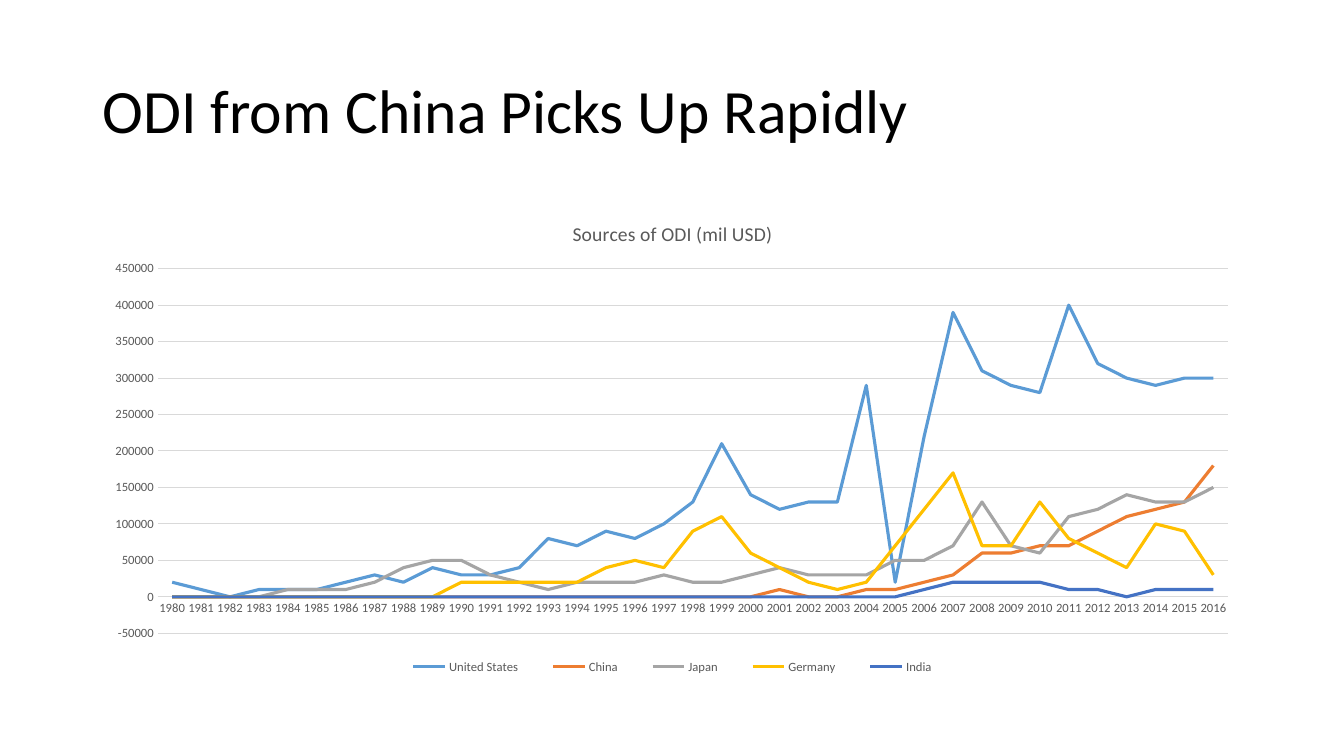
from lxml import etree
from pptx import Presentation
from pptx import util as u
from pptx.chart.data import CategoryChartData
from pptx.dml.color import RGBColor
from pptx.enum import chart as charts, text
from pptx.oxml import ns

FONT = "Calibri"
BLACK = RGBColor(0x00, 0x00, 0x00)
GRAY = RGBColor(0x59, 0x59, 0x59)
GRID = RGBColor(0xD9, 0xD9, 0xD9)
BLUE = RGBColor(0x5B, 0x9B, 0xD5)
ORANGE = RGBColor(0xED, 0x7D, 0x31)
SILVER = RGBColor(0xA5, 0xA5, 0xA5)
GOLD = RGBColor(0xFF, 0xC0, 0x00)
NAVY = RGBColor(0x44, 0x72, 0xC4)

YEARS = range(1980, 2017)
UNIT = 10000  # million USD
SOURCES = [
    ("United States", BLUE, [
        2, 1, 0, 1, 1, 1, 2, 3, 2, 4, 3, 3, 4, 8, 7, 9, 8, 10, 13, 21, 14, 12, 13,
        13, 29, 2, 22, 39, 31, 29, 28, 40, 32, 30, 29, 30, 30]),
    ("China", ORANGE, [0] * 21 + [
        1, 0, 0, 1, 1, 2, 3, 6, 6, 7, 7, 9, 11, 12, 13, 18]),
    ("Japan", SILVER, [0] * 4 + [
        1, 1, 1, 2, 4, 5, 5, 3, 2, 1, 2, 2, 2, 3, 2, 2, 3, 4, 3, 3, 3, 5, 5, 7, 13,
        7, 6, 11, 12, 14, 13, 13, 15]),
    ("Germany", GOLD, [0] * 10 + [
        2, 2, 2, 2, 2, 4, 5, 4, 9, 11, 6, 4, 2, 1, 2, 7, 12, 17, 7, 7, 13, 8, 6, 4,
        10, 9, 3]),
    ("India", NAVY, [0] * 26 + [1, 2, 2, 2, 2, 1, 1, 0, 1, 1, 1]),
]


def style_font(font, size, color):
    for name, value in {"name": FONT, "size": u.Pt(size), "bold": False}.items():
        setattr(font, name, value)
    font.color.rgb = color


def place(element, position, settings):
    """Give a chart part a manual layout, in shares of the chart's size."""
    for old_layout in element.findall(ns.qn("c:layout")):
        element.remove(old_layout)
    layout = etree.Element(ns.qn("c:layout"))
    element.insert(position, layout)
    manual = etree.SubElement(layout, ns.qn("c:manualLayout"))
    for tag, value in settings.items():
        etree.SubElement(manual, ns.qn(f"c:{tag}"), val=str(value))


presentation = Presentation()
presentation.slide_width = u.Inches(13.33)
presentation.slide_height = u.Inches(7.5)
slide = presentation.slides.add_slide(presentation.slide_layouts[6])
left, width = u.Inches(0.92), u.Inches(11.5)

# Heading
heading = slide.shapes.add_textbox(left, u.Inches(0.4), width, u.Inches(1.45))
frame = heading.text_frame
frame.word_wrap = True
frame.vertical_anchor = text.MSO_ANCHOR.MIDDLE
paragraph = frame.paragraphs[0]
paragraph.text = "ODI from China Picks Up Rapidly"
paragraph.line_spacing = 0.9
style_font(paragraph.runs[0].font, 44, BLACK)

# Line chart
data = CategoryChartData(number_format="General")
data.categories = [str(year) for year in YEARS]
for country, _, amounts in SOURCES:
    data.add_series(country, [amount * UNIT for amount in amounts])
chart = slide.shapes.add_chart(
    charts.XL_CHART_TYPE.LINE, left, u.Inches(2), width, u.Inches(4.76), data).chart
style_font(chart.font, 10, BLACK)
chart.plots[0].vary_by_categories = False
for series, (_, color, _) in zip(chart.plots[0].series, SOURCES):
    series.smooth = False
    series.marker.style = charts.XL_MARKER_STYLE.NONE
    series.format.line.color.rgb = color
    series.format.line.width = u.Pt(2.25)

chart.has_title = True
chart_title = chart.chart_title.text_frame
chart_title.text = "Sources of ODI (mil USD)"
style_font(chart_title.paragraphs[0].runs[0].font, 14, GRAY)

# Axes and legend
for axis in (chart.category_axis, chart.value_axis):
    axis.major_tick_mark = axis.minor_tick_mark = charts.XL_TICK_MARK.NONE
    style_font(axis.tick_labels.font, 9, GRAY)
chart.value_axis.format.line.fill.background()
for name, value in {"minimum_scale": -50000, "maximum_scale": 450000,
                    "major_unit": 50000, "has_major_gridlines": True}.items():
    setattr(chart.value_axis, name, value)
for line in (chart.category_axis.format.line, chart.value_axis.major_gridlines.format.line):
    line.color.rgb = GRID
    line.width = u.Pt(0.75)

chart.has_legend = True
chart.legend.position = charts.XL_LEGEND_POSITION.BOTTOM
chart.legend.include_in_layout = False
style_font(chart.legend.font, 9, GRAY)

edges = {"xMode": "edge", "yMode": "edge"}
place(chart.plots[0]._element.getparent(), 0,
      {"layoutTarget": "inner", **edges, "x": 0.056, "y": 0.14, "w": 0.923, "h": 0.76})
place(chart.legend._element, 1, {**edges, "x": 0.25, "y": 0.94, "w": 0.5, "h": 0.07})

presentation.save("out.pptx")
